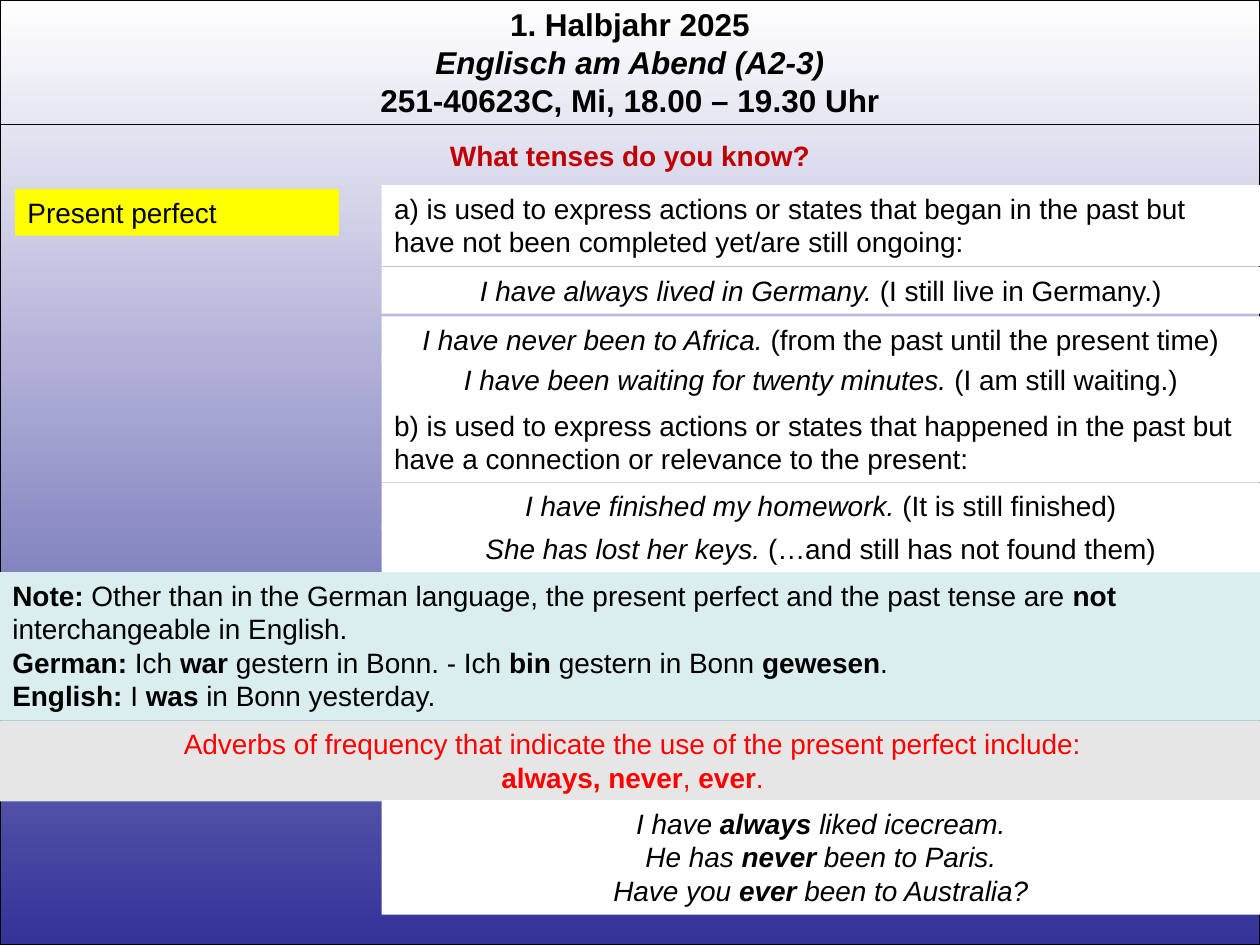
"""Build the present perfect grammar slide."""
from dataclasses import dataclass

from lxml import etree
from pptx import Presentation
from pptx import util as u
from pptx.dml.color import RGBColor
from pptx.enum import shapes, text
from pptx.oxml.ns import qn


@dataclass(frozen=True)
class Theme:
    """Hold colours, type sizes and the line pitch in grid rows."""
    font: str = "Arial"
    header_size: int = 18
    body_size: int = 16
    rule_width: float = 0.75
    black: str = "000000"
    white: str = "FFFFFF"
    indigo: str = "333399"
    heading: str = "C00000"
    label: str = "FFFF00"
    note: str = "DAEDEF"
    adverbs: str = "E6E6E6"
    red: str = "FF0000"
    line_rows: float = 3.6
    padding_rows: float = 1.33


@dataclass(frozen=True)
class Box:
    """Describe a region on a grid of 100 columns and 100 rows."""
    left: float
    top: float
    width: float
    height: float = 0

    def place(self, shape):
        """Move a shape onto this region."""
        for name, share, full in (("left", self.left, WIDTH), ("top", self.top, HEIGHT),
                                  ("width", self.width, WIDTH), ("height", self.height, HEIGHT)):
            setattr(shape, name, round(share / 100 * full))


THEME = Theme()
WIDTH, HEIGHT = u.Inches(10), u.Inches(7.5)
LEFT, CENTER = text.PP_ALIGN.LEFT, text.PP_ALIGN.CENTER

RULES = (
    (0, 2, LEFT, "a) is used to express actions or states that began in the past but "
                 "have not been completed yet/are still ongoing:"),
    (8.67, 1, CENTER, "_I have always lived in Germany. _(I still live in Germany.)"),
    (18.13, 1, CENTER, "_I have been waiting for twenty minutes. _(I am still waiting.)"),
    (22.93, 2, LEFT, "b) is used to express actions or states that happened in the past but "
                     "have a connection or relevance to the present:"),
    (31.47, 1, CENTER, "_I have finished my homework. _(It is still finished)"),
    (36, 1, CENTER, "_She has lost her keys. _(…and still has not found them)"),
    (13.87, 1, CENTER, "_I have never been to Africa. _(from the past until the present time)"),
)
NOTE = (
    "*Note: *Other than in the German language, the present perfect and the past tense "
    "are *not* interchangeable in English.",
    "*German: *Ich *war *gestern in Bonn. - Ich *bin *gestern in Bonn *gewesen*.",
    "*English: *I *was* in Bonn yesterday.",
)
ADVERBS = (
    "Adverbs of frequency that indicate the use of the present perfect include:",
    "*always, never*, *ever*.",
)
EXAMPLES = (
    "_I have *always *liked icecream._",
    "_He has *never *been to Paris._",
    "_Have you *ever *been to Australia?_",
)
HEADER = (
    "*1. Halbjahr 2025*",
    "*_Englisch am Abend (A2-3)_*",
    "*251-40623C, Mi, 18.00 – 19.30 Uhr*",
)


def apply(target, **values):
    """Set attributes from format values."""
    for name, value in values.items():
        setattr(target, name, value)


def write(shape, lines, align=LEFT, color=THEME.black, size=THEME.body_size):
    """Write lines in which * toggles bold and _ toggles italic."""
    frame = shape.text_frame
    apply(frame, word_wrap=True, vertical_anchor=text.MSO_ANCHOR.TOP,
          auto_size=text.MSO_AUTO_SIZE.SHAPE_TO_FIT_TEXT,
          margin_left=u.Inches(0.1), margin_right=u.Inches(0.1),
          margin_top=u.Inches(0.05), margin_bottom=u.Inches(0.05))
    for index, line in enumerate(lines):
        paragraph = frame.add_paragraph() if index else frame.paragraphs[0]
        apply(paragraph, alignment=align, space_before=u.Pt(0))
        italic = False
        for part_index, part in enumerate(line.split("*")):
            for piece_index, piece in enumerate(part.split("_")):
                italic ^= piece_index > 0
                if piece:
                    run = paragraph.add_run()
                    run.text = piece
                    apply(run.font, name=THEME.font, size=u.Pt(size),
                          bold=part_index % 2 == 1, italic=italic)
                    run.font.color.rgb = RGBColor.from_string(color)


def add_rectangle(slide, box):
    """Add a rectangle without shadow."""
    shape = slide.shapes.add_shape(shapes.MSO_SHAPE.RECTANGLE, 0, 0, 0, 0)
    box.place(shape)
    shape.shadow.inherit = False
    return shape


def add_panel(slide, box, lines, fill, row_count=None, **style):
    """Add a filled text panel as tall as its rows of text."""
    height = THEME.padding_rows + THEME.line_rows * (row_count or len(lines))
    shape = add_rectangle(slide, Box(box.left, box.top, box.width, height))
    shape.fill.solid()
    shape.fill.fore_color.rgb = RGBColor.from_string(fill)
    shape.line.fill.background()
    write(shape, lines, **style)


def add_backdrop(slide, box):
    """Add the framed gradient behind everything else."""
    shape = add_rectangle(slide, box)
    shape.fill.gradient()
    shape.fill.gradient_angle = 270
    for stop, position, color in zip(shape.fill.gradient_stops, (0, 1),
                                     (THEME.white, THEME.indigo)):
        stop.position = position
        stop.color.rgb = RGBColor.from_string(color)
    shape.line.color.rgb = RGBColor.from_string(THEME.black)
    shape.line.width = u.Pt(THEME.rule_width)
    slide.shapes.title._element.addprevious(shape._element)


def add_header(slide, box):
    """Add the course details and the rule beneath them."""
    shape = slide.shapes.add_textbox(0, 0, 0, 0)
    box.place(shape)
    write(shape, HEADER, CENTER, size=THEME.header_size)
    bottom = round((box.top + box.height) / 100 * HEIGHT)
    rule = slide.shapes.add_connector(shapes.MSO_CONNECTOR.STRAIGHT, 0, bottom, WIDTH, bottom)
    rule.line.color.rgb = RGBColor.from_string(THEME.black)
    rule.line.width = u.Pt(THEME.rule_width)
    etree.SubElement(rule._element.spPr, qn("a:effectLst"))


def add_heading(slide, box):
    """Place and format the slide title."""
    box.place(slide.shapes.title)
    write(slide.shapes.title, ["*What tenses do you know?*"], CENTER, THEME.heading)


def add_rules(slide, box):
    """Stack the usage rules and their examples down the column."""
    for offset, row_count, align, line in RULES:
        add_panel(slide, Box(box.left, box.top + offset, box.width), [line],
                  THEME.white, row_count, align=align)


def main():
    """Build and save the slide."""
    presentation = Presentation()
    apply(presentation, slide_width=WIDTH, slide_height=HEIGHT)
    slide = presentation.slides.add_slide(presentation.slide_layouts[5])
    add_backdrop(slide, Box(0, 0, 100, 100))
    add_header(slide, Box(0, -0.13, 100, 13.33))
    add_heading(slide, Box(0, 14, 100, 4.93))
    add_panel(slide, Box(1.2, 20, 25.7), ["Present perfect"], THEME.label)
    add_rules(slide, Box(30.3, 19.6, 69.7))
    add_panel(slide, Box(0, 60.53, 100), NOTE, THEME.note, row_count=4)
    add_panel(slide, Box(0, 76.27, 100.4), ADVERBS, THEME.adverbs,
              align=CENTER, color=THEME.red)
    add_panel(slide, Box(30.3, 84.67, 69.7), EXAMPLES, THEME.white, align=CENTER)
    presentation.save("out.pptx")


if __name__ == "__main__":
    main()
